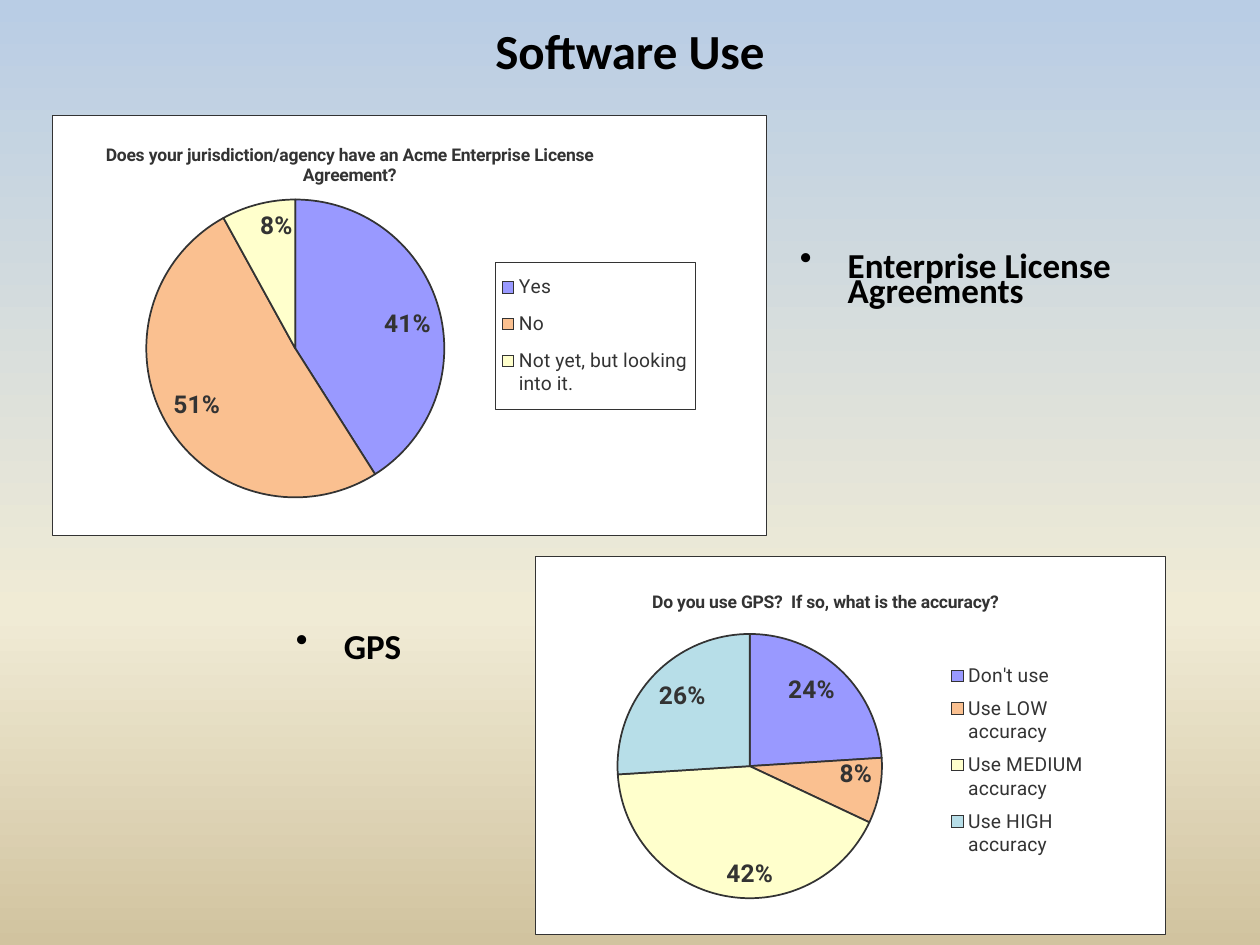
"""Build the Software Use slide with two survey pie charts."""
from pptx import Presentation
from pptx.chart.data import CategoryChartData
from pptx.dml.color import RGBColor
from pptx.enum.chart import XL_CHART_TYPE, XL_LABEL_POSITION, XL_LEGEND_POSITION
from pptx.enum.text import MSO_ANCHOR, PP_ALIGN
from pptx.oxml import parse_xml
from pptx.oxml.ns import nsdecls, qn
from pptx.util import Inches, Pt

THEME = {
    "bg": [(0, "B9CDE5"), (65, "F0EBD5"), (100, "D1C39F")],
    "slices": ["9999FF", "FAC090", "FFFFCC", "B7DEE8"],
    "ink": "333333", "panel": "FFFFFF", "text": "000000",
    "title": {"name": "Calibri", "size": Pt(28), "bold": True},
    "bullet": {"name": "Calibri", "size": Pt(20), "bold": True},
    "chart": {"name": "Roboto", "size": Pt(10), "bold": False},
    "chart_title": {"name": "Roboto", "size": Pt(10), "bold": True},
    "legend": {"name": "Roboto", "size": Pt(11), "bold": False},
    "label": {"name": "Roboto", "size": Pt(14), "bold": True},
}
COL, ROW = Inches(10) / 120, Inches(7.5) / 90


def style(font, key, color):
    """Apply a theme type style and a colour to a font."""
    for name, value in THEME[key].items():
        setattr(font, name, value)
    font.color.rgb = RGBColor.from_string(THEME[color])


def place(el, before, inner, **shares):
    """Set a manual layout, in shares of the chart, ahead of a child element."""
    for old in el.findall(qn("c:layout")):
        el.remove(old)
    target = '<c:layoutTarget val="inner"/>' if inner else ""
    modes = '<c:xMode val="edge"/><c:yMode val="edge"/>'
    vals = "".join(f'<c:{k} val="{v}"/>' for k, v in shares.items())
    el.find(qn(before)).addprevious(parse_xml(
        f'<c:layout {nsdecls("c")}><c:manualLayout>{target}{modes}{vals}</c:manualLayout></c:layout>'))


prs = Presentation()
prs.slide_width, prs.slide_height = Inches(10), Inches(7.5)
s = prs.slides.add_slide(prs.slide_layouts[5])

fill = s.background.fill
fill.gradient()
fill.gradient_angle = 270
stops = s.background._cSld.find(".//" + qn("a:gsLst"))
for old in list(stops):
    stops.remove(old)
for pos, color in THEME["bg"]:
    stops.append(parse_xml(
        f'<a:gs {nsdecls("a")} pos="{pos * 1000}"><a:srgbClr val="{color}"/></a:gs>'))

sp = s.shapes.title
box = {"left": 2 * COL, "top": ROW, "width": 116 * COL, "height": 8 * ROW}
for name, value in box.items():
    setattr(sp, name, int(value))
tf = sp.text_frame
tf.text, tf.vertical_anchor = "Software Use", MSO_ANCHOR.MIDDLE
p = tf.paragraphs[0]
p.alignment, p.line_spacing = PP_ALIGN.CENTER, 0.95
style(p.runs[0].font, "title", "text")

bullets = [
    ("Enterprise License Agreements", 75, 24, 41, 0.6),
    ("GPS", 27, 60, 22, 0.7),
]
for text, col, row, cols, spacing in bullets:
    sp = s.shapes.add_textbox(int(col * COL), int(row * ROW), int(cols * COL), int(6 * ROW))
    tf = sp.text_frame
    tf.word_wrap = True
    p = tf.paragraphs[0]
    p.line_spacing, p.space_before = spacing, Pt(10)
    r = p.add_run()
    r.text = text
    style(r.font, "bullet", "text")
    pPr = p._p.get_or_add_pPr()
    pPr.set("marL", str(Inches(0.38)))
    pPr.set("indent", str(-Inches(0.38)))
    pPr.append(parse_xml(f'<a:buChar {nsdecls("a")} char="•"/>'))

charts = [
    {"title": "Does your jurisdiction/agency have an Acme Enterprise License Agreement?",
     "data": {"Yes": 41, "No": 51, "Not yet, but looking into it.": 8},
     "box": (5, 11, 68, 40), "title_at": {"x": 0.07, "y": 0.06}, "framed": True,
     "legend_at": {"x": 0.62, "y": 0.35, "w": 0.28, "h": 0.35}},
    {"title": "Do you use GPS?  If so, what is the accuracy?",
     "data": {"Don't use": 24, "Use LOW accuracy": 8,
              "Use MEDIUM accuracy": 42, "Use HIGH accuracy": 26},
     "box": (51, 53, 60, 36), "title_at": {"x": 0.18, "y": 0.08}, "framed": False,
     "legend_at": {"x": 0.64, "y": 0.26, "w": 0.25, "h": 0.56}},
]
for item in charts:
    cd = CategoryChartData()
    cd.categories = list(item["data"])
    cd.add_series("Series 1", list(item["data"].values()))
    col, row, cols, rows = item["box"]
    chart = s.shapes.add_chart(XL_CHART_TYPE.PIE, int(col * COL), int(row * ROW),
                               int(cols * COL), int(rows * ROW), cd).chart
    style(chart.font, "chart", "ink")
    frame = (f'<c:spPr {nsdecls("c", "a")}><a:solidFill><a:srgbClr val="{THEME["panel"]}"/></a:solidFill>'
             f'<a:ln w="{Pt(0.25)}"><a:solidFill><a:srgbClr val="{THEME["ink"]}"/></a:solidFill></a:ln></c:spPr>')
    chart._chartSpace.find(qn("c:txPr")).addprevious(parse_xml(frame))

    tf = chart.chart_title.text_frame
    tf.text = item["title"]
    style(tf.paragraphs[0].runs[0].font, "chart_title", "ink")
    chart.chart_title.include_in_layout = False
    place(chart.chart_title._element, "c:overlay", False, **item["title_at"])

    chart.has_legend = True
    legend = chart.legend
    legend.position, legend.include_in_layout = XL_LEGEND_POSITION.RIGHT, False
    style(legend.font, "legend", "ink")
    place(legend._element, "c:overlay", False, **item["legend_at"])
    if item["framed"]:
        legend._element.find(qn("c:txPr")).addprevious(parse_xml(frame))

    plot = chart.plots[0]
    plot.vary_by_categories = True
    place(chart._chartSpace.chart.plotArea, "c:pieChart", True, x=0.13, y=0.2, w=0.42, h=0.71)
    plot.has_data_labels = True
    labels = plot.data_labels
    formats = {"show_percentage": True, "show_value": False, "number_format": "0%",
               "number_format_is_linked": False, "position": XL_LABEL_POSITION.INSIDE_END}
    for name, value in formats.items():
        setattr(labels, name, value)
    style(labels.font, "label", "ink")
    for i, color in zip(range(len(item["data"])), THEME["slices"]):
        fmt = plot.series[0].points[i].format
        fmt.fill.solid()
        fmt.fill.fore_color.rgb = RGBColor.from_string(color)
        fmt.line.color.rgb = RGBColor.from_string(THEME["ink"])
        fmt.line.width = Pt(1)

prs.save("out.pptx")
